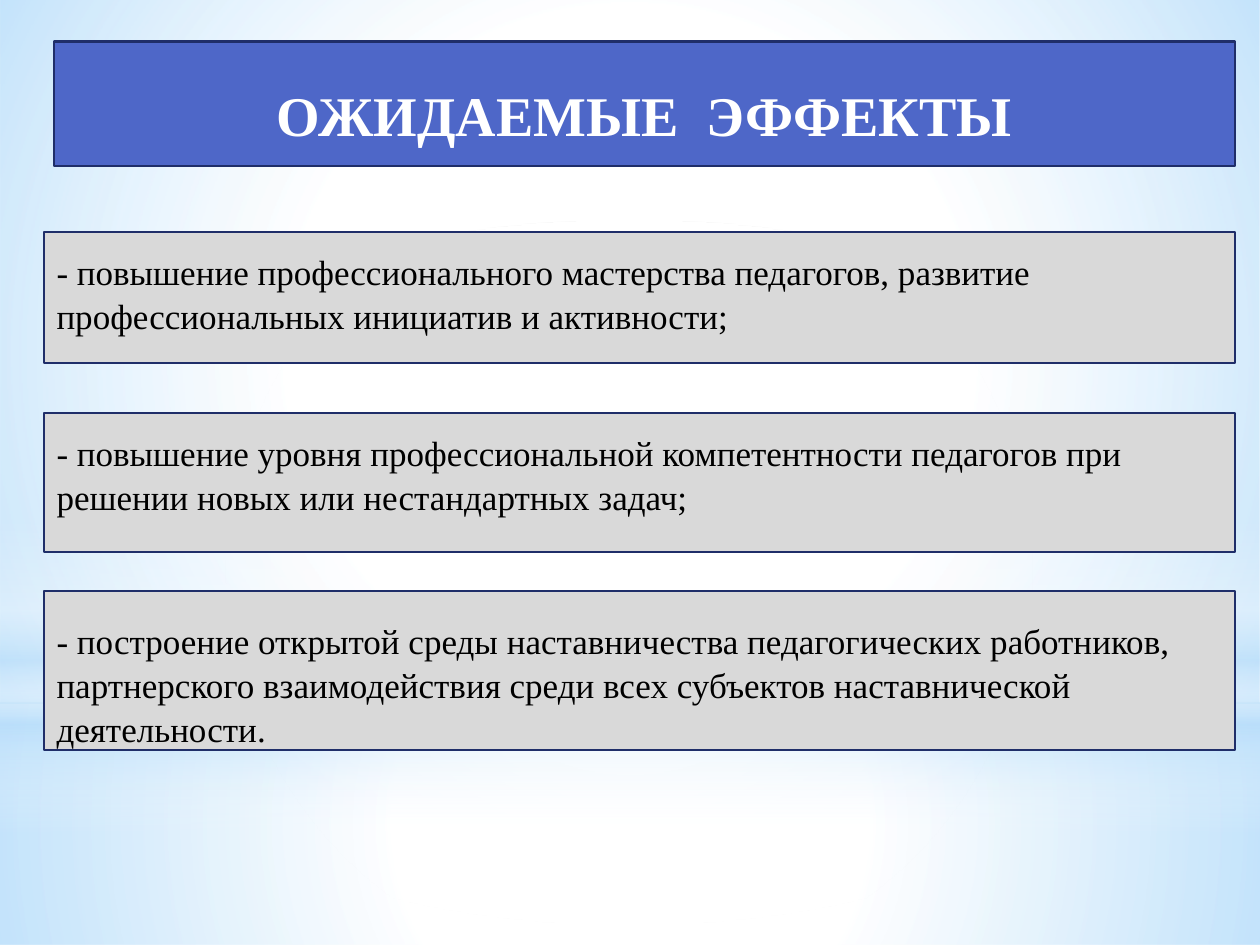
import pptx
import pptx.util
import pptx.dml.color
import pptx.enum.shapes
import pptx.enum.text
import pptx.oxml
from pptx.oxml.ns import nsdecls
from pptx.util import Inches

SHAPES = pptx.enum.shapes.MSO_SHAPE
ALIGN = pptx.enum.text.PP_ALIGN
ANCHOR = pptx.enum.text.MSO_ANCHOR
FONT = "Times New Roman"
OUTLINE = "1F2E69"
PANEL_FILL = "D9D9D9"

TITLE = "ОЖИДАЕМЫЕ  ЭФФЕКТЫ"

# text, top, height, inset above the text
EFFECTS = [
    ("- повышение профессионального мастерства педагогов, развитие "
     "профессиональных инициатив и активности;", 1.84, 1.04, 0.13),
    ("- повышение уровня профессиональной компетентности педагогов при "
     "решении новых или нестандартных задач;", 3.28, 1.1, 0.13),
    ("- построение открытой среды наставничества педагогических работников, "
     "партнерского взаимодействия среди всех субъектов наставнической "
     "деятельности.", 4.69, 1.26, 0.21),
]

RADIAL = ('<a:path path="circle"><a:fillToRect l="50000" t="50000" '
          'r="50000" b="50000"/></a:path>')
VERTICAL = '<a:lin ang="5400000" scaled="0"/>'

# preset, top, height, direction, stops of (position %, colour, opacity %)
BACKDROP = [
    (SHAPES.RECTANGLE, 5.58, 1.92, RADIAL,
     [(0, "FFFFFF", 91), (37, "FFFFFF", 76), (100, "B4DCFA", 79)]),
    (SHAPES.RECTANGLE, 0, 5.58, RADIAL,
     [(0, "FFFFFF", 89), (48, "FFFFFF", 62), (100, "B4DCFA", 79)]),
    (SHAPES.RECTANGLE, 4.12, 2.5, VERTICAL,
     [(0, "FFFFFF", 0), (29, "FFFFFF", 30), (45, "B4DCFA", 40),
      (55, "FFFFFF", 26), (65, "B4DCFA", 60), (100, "FFFFFF", 0)]),
    (SHAPES.OVAL, 1.75, 5.58, RADIAL,
     [(0, "FFFFFF", 100), (56, "FFFFFF", 0)]),
]


def color(hex_string):
    return pptx.dml.color.RGBColor.from_string(hex_string)


def set_attributes(target, values):
    for name, value in values.items():
        setattr(target, name, value)


def add_shape(slide, preset, left, top, width, height):
    shape = slide.shapes.add_shape(
        preset, Inches(left), Inches(top), Inches(width), Inches(height))
    shape.shadow.inherit = False
    return shape


def add_glow(slide, preset, top, height, direction, stops):
    """Add a full-width borderless shape with a translucent gradient."""
    shape = add_shape(slide, preset, 0, top, 10, height)
    shape.line.fill.background()
    stop_xml = "".join(
        f'<a:gs pos="{position * 1000}"><a:srgbClr val="{hex_string}">'
        f'<a:alpha val="{opacity * 1000}"/></a:srgbClr></a:gs>'
        for position, hex_string, opacity in stops)
    gradient = pptx.oxml.parse_xml(
        f'<a:gradFill {nsdecls("a")} rotWithShape="1">'
        f'<a:gsLst>{stop_xml}</a:gsLst>{direction}</a:gradFill>')
    shape.element.spPr.find(pptx.oxml.ns.qn("a:prstGeom")).addnext(gradient)


def add_panel(slide, box, fill, text, frame_format, paragraph_format,
              font_format, text_color):
    shape = add_shape(slide, SHAPES.RECTANGLE, *box)
    shape.fill.solid()
    shape.fill.fore_color.rgb = color(fill)
    shape.line.color.rgb = color(OUTLINE)
    shape.line.width = pptx.util.Pt(1.25)
    set_attributes(shape.text_frame, {"word_wrap": True, **frame_format})
    paragraph = shape.text_frame.paragraphs[0]
    set_attributes(paragraph, paragraph_format)
    run = paragraph.add_run()
    run.text = text
    set_attributes(run.font, {"name": FONT, **font_format})
    run.font.color.rgb = color(text_color)


def main():
    presentation = pptx.Presentation()
    presentation.slide_width = Inches(10)
    presentation.slide_height = Inches(7.5)
    slide = presentation.slides.add_slide(presentation.slide_layouts[6])

    for glow in BACKDROP:
        add_glow(slide, *glow)

    add_panel(slide, (0.43, 0.33, 9.37, 0.99), "4E67C8", TITLE,
              {"vertical_anchor": ANCHOR.MIDDLE, "margin_top": Inches(0.13)},
              {"alignment": ALIGN.CENTER, "line_spacing": 1.15},
              {"size": pptx.util.Pt(32), "bold": True}, "FFFFFF")

    for text, top, height, inset in EFFECTS:
        add_panel(slide, (0.35, top, 9.45, height), PANEL_FILL, text,
                  {"vertical_anchor": ANCHOR.TOP, "margin_top": Inches(inset)},
                  {"alignment": ALIGN.LEFT, "line_spacing": 1.05},
                  {"size": pptx.util.Pt(20)}, "000000")

    presentation.save("out.pptx")


if __name__ == "__main__":
    main()
